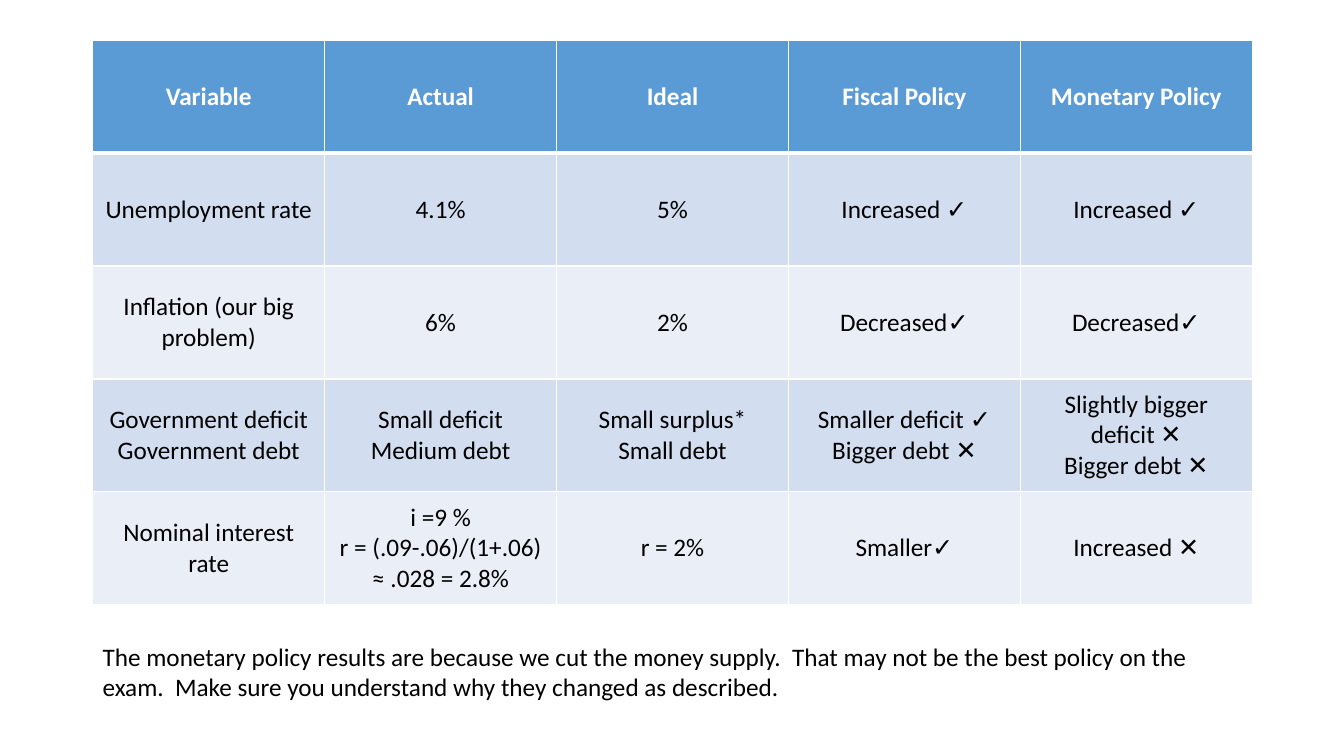
"""Build a slide comparing fiscal and monetary policy results."""
from dataclasses import dataclass

import pptx
import pptx.dml.color
import pptx.enum.text
import pptx.oxml
import pptx.oxml.ns
import pptx.util


@dataclass(frozen=True)
class Theme:
    """Colours and type sizes of the slide."""
    font: str = "Calibri"
    size: int = 18
    ink: str = "000000"
    paper: str = "FFFFFF"
    head: str = "5B9BD5"
    bands: tuple = ("D2DEEF", "EAEFF7")
    thin: int = 1
    thick: int = 3


THEME = Theme()
WIDE, HIGH = 13.33, 7.5
LEFT, SPAN = 0.92, 11.5
ROWS = [
    ["Variable", "Actual", "Ideal", "Fiscal Policy", "Monetary Policy"],
    ["Unemployment rate", "4.1%", "5%", "Increased ✓", "Increased ✓"],
    ["Inflation (our big problem)", "6%", "2%", "Decreased✓", "Decreased✓"],
    ["Government deficit Government debt", "Small deficit\nMedium debt",
     "Small surplus*\nSmall debt", "Smaller deficit ✓\nBigger debt ✕",
     "Slightly bigger deficit ✕\nBigger debt ✕"],
    ["Nominal interest rate", "i =9 %\nr = (.09-.06)/(1+.06) ≈ .028 = 2.8%",
     "r = 2%", "Smaller✓", "Increased ✕"],
]
NOTE = ("The monetary policy results are because we cut the money supply.  "
        "That may not be the best policy on the exam.  "
        "Make sure you understand why they changed as described.")


def place(*sides):
    """Turn inches into slide lengths."""
    return [pptx.util.Inches(side) for side in sides]


def write(frame, text, color, bold=False, align=pptx.enum.text.PP_ALIGN.LEFT):
    """Set the text of a frame and format its runs."""
    frame.text = text
    for line in frame.paragraphs:
        line.alignment = align
        for run in line.runs:
            font = run.font
            font.name, font.size = THEME.font, pptx.util.Pt(THEME.size)
            font.bold = bold
            font.color.rgb = pptx.dml.color.RGBColor.from_string(color)


def edge(cell, side, width):
    """Draw one border of a cell."""
    space = pptx.oxml.ns.nsdecls("a")
    line = pptx.oxml.parse_xml(
        f'<a:ln{side} {space} w="{pptx.util.Pt(width)}"><a:solidFill>'
        f'<a:srgbClr val="{THEME.paper}"/></a:solidFill></a:ln{side}>')
    cell._tc.get_or_add_tcPr().append(line)


def fill(cell, text, row):
    """Style and write one table cell."""
    top = row == 0
    widths = {"L": THEME.thin, "R": THEME.thin,
              "T": THEME.thick if row == 1 else THEME.thin,
              "B": THEME.thick if top else THEME.thin}
    for side, width in widths.items():
        edge(cell, side, width)
    shade = THEME.head if top else THEME.bands[(row - 1) % 2]
    cell.fill.solid()
    cell.fill.fore_color.rgb = pptx.dml.color.RGBColor.from_string(shade)
    cell.vertical_anchor = pptx.enum.text.MSO_ANCHOR.MIDDLE
    write(cell.text_frame, text, THEME.paper if top else THEME.ink,
          top, pptx.enum.text.PP_ALIGN.CENTER)


def grid(slide, rows, box):
    """Add a table with equal rows and columns."""
    table = slide.shapes.add_table(len(rows), len(rows[0]), *place(*box)).table
    for row, texts in enumerate(rows):
        for col, text in enumerate(texts):
            fill(table.cell(row, col), text, row)


def note(slide, text, box):
    """Add a wrapped text box."""
    frame = slide.shapes.add_textbox(*place(*box)).text_frame
    frame.word_wrap = True
    write(frame, text, THEME.ink)


def main():
    """Build and save the slide."""
    deck = pptx.Presentation()
    deck.slide_width, deck.slide_height = place(WIDE, HIGH)
    slide = deck.slides.add_slide(deck.slide_layouts[6])
    grid(slide, ROWS, (LEFT, 0.4, SPAN, 5.6))
    note(slide, NOTE, (LEFT, 6.31, SPAN, 0.71))
    deck.save("out.pptx")


if __name__ == "__main__":
    main()
